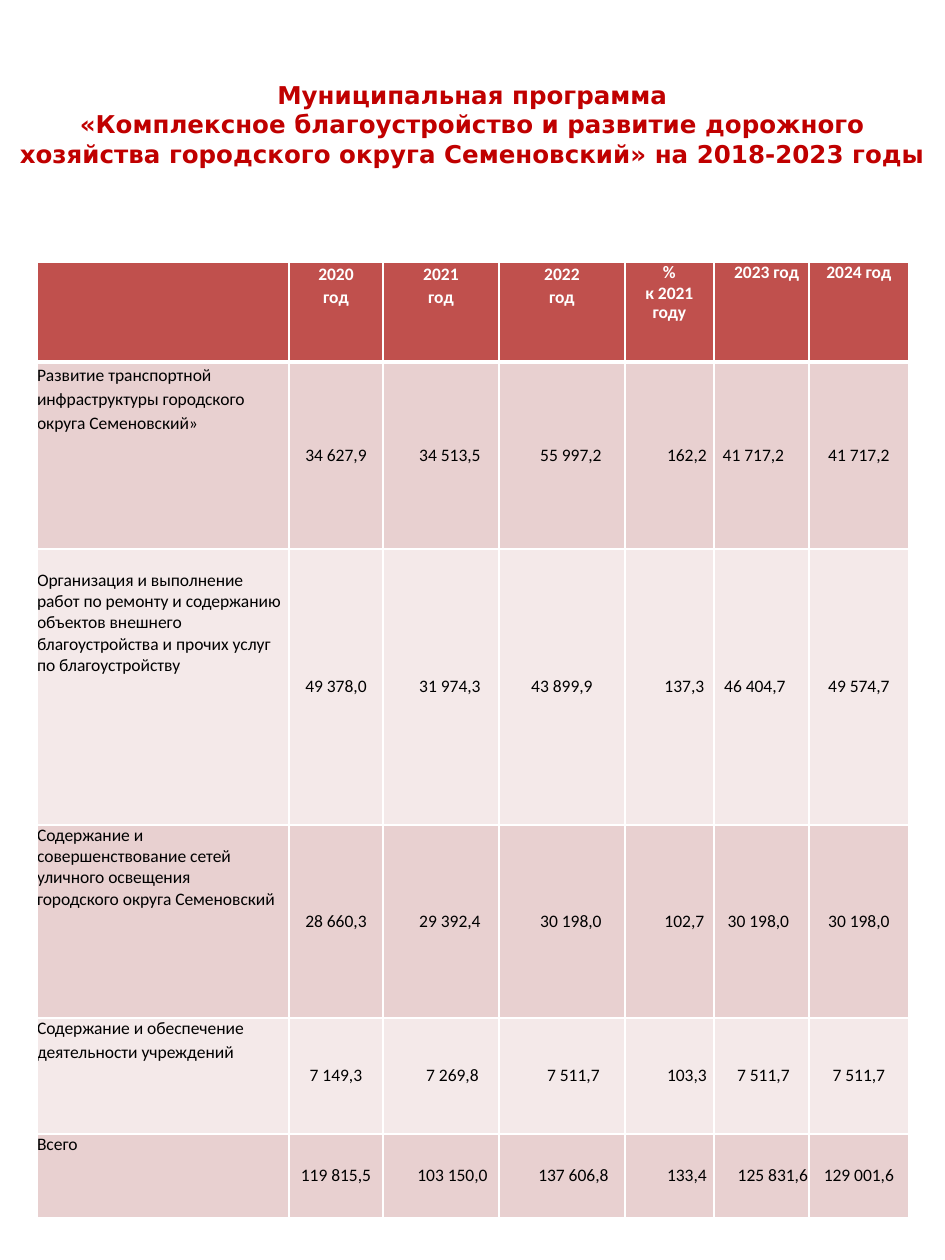
from dataclasses import dataclass

from lxml import etree
from pptx import Presentation
from pptx import util as u
from pptx.dml.color import RGBColor
from pptx.enum import text
from pptx.oxml import ns

PX = 914400 // 126
RED = RGBColor(0xC0, 0x00, 0x00)
BRICK = RGBColor(0xC0, 0x50, 0x4D)
ROSE = RGBColor(0xE8, 0xD0, 0xD0)
BLUSH = RGBColor(0xF4, 0xE9, 0xE9)
WHITE = RGBColor(0xFF, 0xFF, 0xFF)
BLACK = RGBColor(0x00, 0x00, 0x00)
CENTER, LEFT, RIGHT = text.PP_ALIGN.CENTER, text.PP_ALIGN.LEFT, text.PP_ALIGN.RIGHT
TOP, MIDDLE = text.MSO_ANCHOR.TOP, text.MSO_ANCHOR.MIDDLE
COLUMNS = (252, 94, 116, 126, 89, 95, 100)
HEADER_HEIGHT = 100


@dataclass
class Heading:
    lines: tuple = ()
    spacing: tuple = ()
    align: int = CENTER
    right: int = 0


@dataclass
class Program:
    label: tuple
    height: int
    values: tuple
    lefts: tuple
    right_2023: int = 0
    label_top: int = 0
    line_spacing: float = 1.0
    gap: float = 0


HEADINGS = (
    Heading(),
    *(Heading((year, "год"), (u.Pt(13.2),) * 2) for year in ("2020", "2021", "2022")),
    Heading(("%", "к 2021", "году"), (u.Pt(12.1), u.Pt(12), u.Pt(11.1))),
    Heading(("2023 год",), (1.0,), RIGHT, 10),
    Heading(("2024 год",), (1.0,)),
)
PROGRAMS = (
    Program(("Развитие транспортной инфраструктуры городского округа Семеновский»",), 187,
            ("34 627,9", "34 513,5", "55 997,2", "162,2", "41 717,2", "41 717,2"),
            (0, 18, 18, 35, 0, 0), right_2023=16, line_spacing=1.13),
    Program(("Организация и выполнение работ по ремонту и содержанию объектов внешнего "
             "благоустройства и прочих услуг по благоустройству",), 276,
            ("49 378,0", "31 974,3", "43 899,9", "137,3", "46 404,7", "49 574,7"),
            (0, 18, 0, 30, 0, 0), right_2023=13, label_top=21),
    Program(("Содержание и совершенствование сетей уличного освещения",
             "городского округа Семеновский"), 193,
            ("28 660,3", "29 392,4", "30 198,0", "102,7", "30 198,0", "30 198,0"),
            (0, 18, 18, 30, 0, 0), right_2023=6),
    Program(("Содержание и обеспечение", "деятельности учреждений"), 116,
            ("7 149,3", "7 269,8", "7 511,7", "103,3", "7 511,7", "7 511,7"),
            (0, 23, 23, 35, 4, 0), gap=1.9),
    Program(("Всего",), 84,
            ("119 815,5", "103 150,0", "137 606,8", "133,4", "125 831,6", "129 001,6"),
            (0, 23, 23, 35, 23, 0)),
)


def add_run(p, words: str, font: str, size: int, color: RGBColor, bold: bool) -> None:
    r = p.add_run()
    r.text = words
    r.font.name = font
    r.font.size = u.Pt(size)
    r.font.color.rgb = color
    r.font.bold = bold


def set_borders(cell, top: int, bottom: int) -> None:
    tc_pr = cell._tc.get_or_add_tcPr()
    for side, width in (("L", 1), ("R", 1), ("T", top), ("B", bottom)):
        ln = etree.SubElement(tc_pr, ns.qn(f"a:ln{side}"), w=str(u.Pt(width)))
        fill = etree.SubElement(ln, ns.qn("a:solidFill"))
        etree.SubElement(fill, ns.qn("a:srgbClr"), val=str(WHITE))


def set_cell(cell, fill: RGBColor, lines: tuple, spacing: tuple, align: int, anchor: int,
             left: int = 0, top: int = 0, right: int = 0, gap: float = 0,
             color: RGBColor = BLACK, bold: bool = False) -> None:
    cell.fill.solid()
    cell.fill.fore_color.rgb = fill
    cell.margin_left, cell.margin_top = left * PX, top * PX
    cell.margin_right, cell.margin_bottom = right * PX, 0
    cell.vertical_anchor = anchor
    tf = cell.text_frame
    for i, (line, leading) in enumerate(zip(lines, spacing)):
        p = tf.add_paragraph() if i else tf.paragraphs[0]
        p.alignment = align
        p.line_spacing = leading
        if i and gap:
            p.space_before = u.Pt(gap)
        add_run(p, line, "Calibri", 10, color, bold)


def add_title(s) -> None:
    sp = s.shapes.title
    sp.left, sp.top, sp.width, sp.height = 0, 73 * PX, 945 * PX, 102 * PX
    tf = sp.text_frame
    tf.word_wrap = True
    tf.auto_size = text.MSO_AUTO_SIZE.NONE
    p = tf.paragraphs[0]
    p.alignment = CENTER
    add_run(p, "Муниципальная программа", "DejaVu Sans", 14, RED, True)
    p.add_line_break()
    add_run(p, "«Комплексное благоустройство и развитие дорожного хозяйства "
               "городского округа Семеновский» на 2018-2023 годы", "DejaVu Sans", 14, RED, True)


def add_budget(s) -> None:
    heights = (HEADER_HEIGHT, *(program.height for program in PROGRAMS))
    table = s.shapes.add_table(len(heights), len(COLUMNS), 37 * PX, 262 * PX,
                               sum(COLUMNS) * PX, sum(heights) * PX).table
    for column, width in zip(table.columns, COLUMNS):
        column.width = width * PX
    for i, (row, height) in enumerate(zip(table.rows, heights)):
        row.height = height * PX
        for cell in row.cells:
            set_borders(cell, 3 if i == 1 else 1, 3 if i == 0 else 1)
    for column, h in enumerate(HEADINGS):
        set_cell(table.cell(0, column), BRICK, h.lines, h.spacing, h.align, TOP,
                 right=h.right, color=WHITE, bold=True)
    for i, program in enumerate(PROGRAMS, 1):
        fill = ROSE if i % 2 else BLUSH
        set_cell(table.cell(i, 0), fill, program.label,
                 (program.line_spacing,) * len(program.label), LEFT, TOP,
                 top=program.label_top, gap=program.gap)
        for column, (value, left) in enumerate(zip(program.values, program.lefts), 1):
            right = program.right_2023 if column == 5 else 0
            set_cell(table.cell(i, column), fill, (value,), (1.0,), CENTER, MIDDLE,
                     left=left, right=right)


def main() -> None:
    prs = Presentation()
    prs.slide_width, prs.slide_height = u.Inches(7.5), u.Inches(10)
    s = prs.slides.add_slide(prs.slide_layouts[5])
    add_title(s)
    add_budget(s)
    prs.save("out.pptx")


if __name__ == "__main__":
    main()
